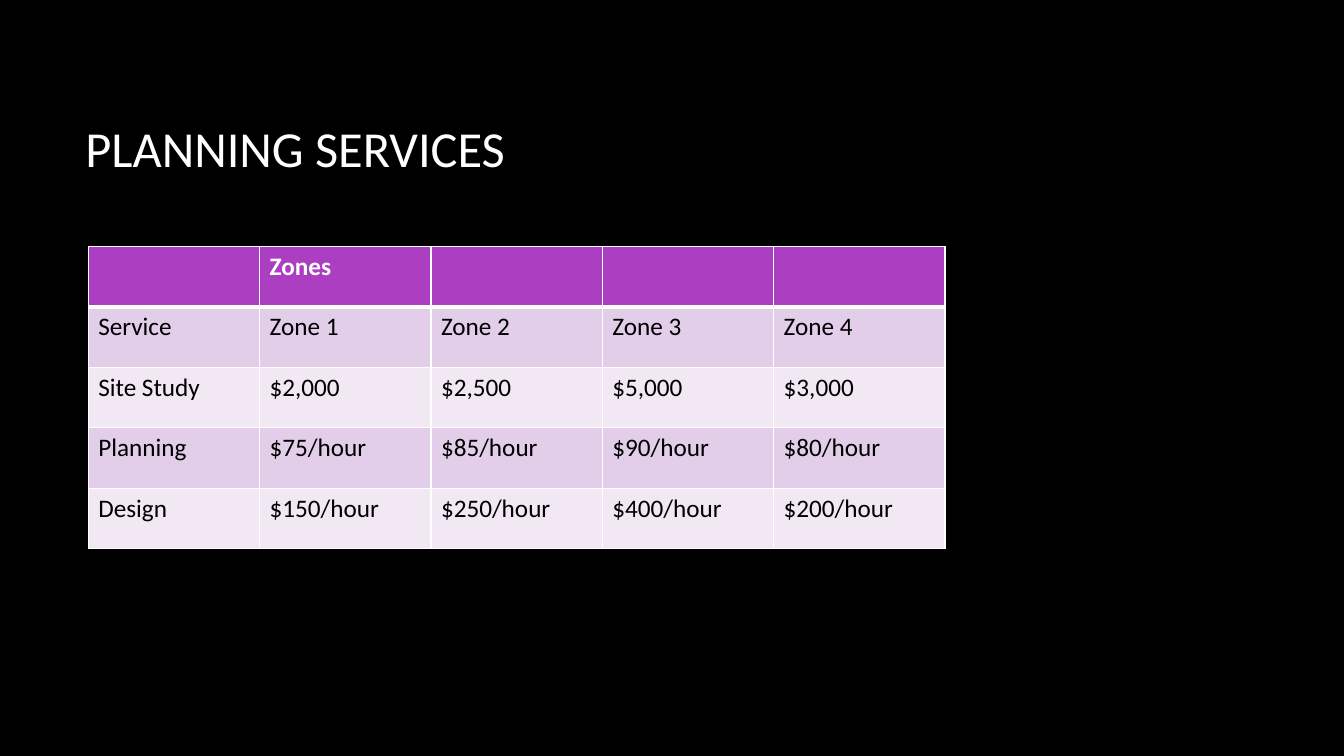
from lxml import etree
from pptx import Presentation
from pptx.dml.color import RGBColor
from pptx.enum.text import MSO_ANCHOR
from pptx.oxml.ns import qn
from pptx.util import Pt

MIDDLE = MSO_ANCHOR.MIDDLE
FONT = "Calibri"
COLORS = {
    "background": "000000",
    "title": "FFFFFF",
    "border": "FFFFFF",
    "header": "AC3EC1",
    "header_text": "FFFFFF",
    "band_dark": "E3CEE9",
    "band_light": "F1E8F4",
    "body_text": "000000",
}
PRICES = [
    ["", "Zones", "", "", ""],
    ["Service", "Zone 1", "Zone 2", "Zone 3", "Zone 4"],
    ["Site Study", "$2,000", "$2,500", "$5,000", "$3,000"],
    ["Planning", "$75/hour", "$85/hour", "$90/hour", "$80/hour"],
    ["Design", "$150/hour", "$250/hour", "$400/hour", "$200/hour"],
]


def rgb(name):
    return RGBColor.from_string(COLORS[name])


def style_font(font, size, color, bold=False):
    font.name = FONT
    font.size = Pt(size)
    font.bold = bold
    font.color.rgb = rgb(color)


def set_borders(cell, top, bottom):
    """Draw all four cell borders; top and bottom are widths in points."""
    tc_pr = cell._tc.get_or_add_tcPr()
    for side, width in (("L", 1), ("R", 1), ("T", top), ("B", bottom)):
        ln = etree.SubElement(tc_pr, qn(f"a:ln{side}"), w=str(Pt(width)))
        fill = etree.SubElement(ln, qn("a:solidFill"))
        etree.SubElement(fill, qn("a:srgbClr"), val=COLORS["border"])


def add_title(slide, text, left, top, width, height):
    tf = slide.shapes.add_textbox(Pt(left), Pt(top), Pt(width), Pt(height)).text_frame
    tf.word_wrap = True
    tf.vertical_anchor = MIDDLE
    r = tf.paragraphs[0].add_run()
    r.text = text
    style_font(r.font, 36, "title")


def add_price_table(slide, rows, left, top, width, height):
    table = slide.shapes.add_table(len(rows), len(rows[0]), Pt(left), Pt(top),
                                   Pt(width), Pt(height)).table
    table.horz_banding = False
    for i, row in enumerate(rows):
        is_header = i == 0
        band = "band_dark" if i % 2 else "band_light"
        text_color = "header_text" if is_header else "body_text"
        for j, text in enumerate(row):
            cell = table.cell(i, j)
            set_borders(cell, 3 if i == 1 else 1, 3 if is_header else 1)
            cell.fill.solid()
            cell.fill.fore_color.rgb = rgb("header" if is_header else band)
            p = cell.text_frame.paragraphs[0]
            if text:
                r = p.add_run()
                r.text = text
                style_font(r.font, 18, text_color, is_header)


def main():
    prs = Presentation()
    prs.slide_width, prs.slide_height = Pt(960), Pt(540)
    slide = prs.slides.add_slide(prs.slide_layouts[6])
    slide.background.fill.solid()
    slide.background.fill.fore_color.rgb = rgb("background")
    add_title(slide, "PLANNING SERVICES", 54, 48, 798, 114.5)
    add_price_table(slide, PRICES, 63, 176, 612, 216)
    prs.save("out.pptx")


if __name__ == "__main__":
    main()
